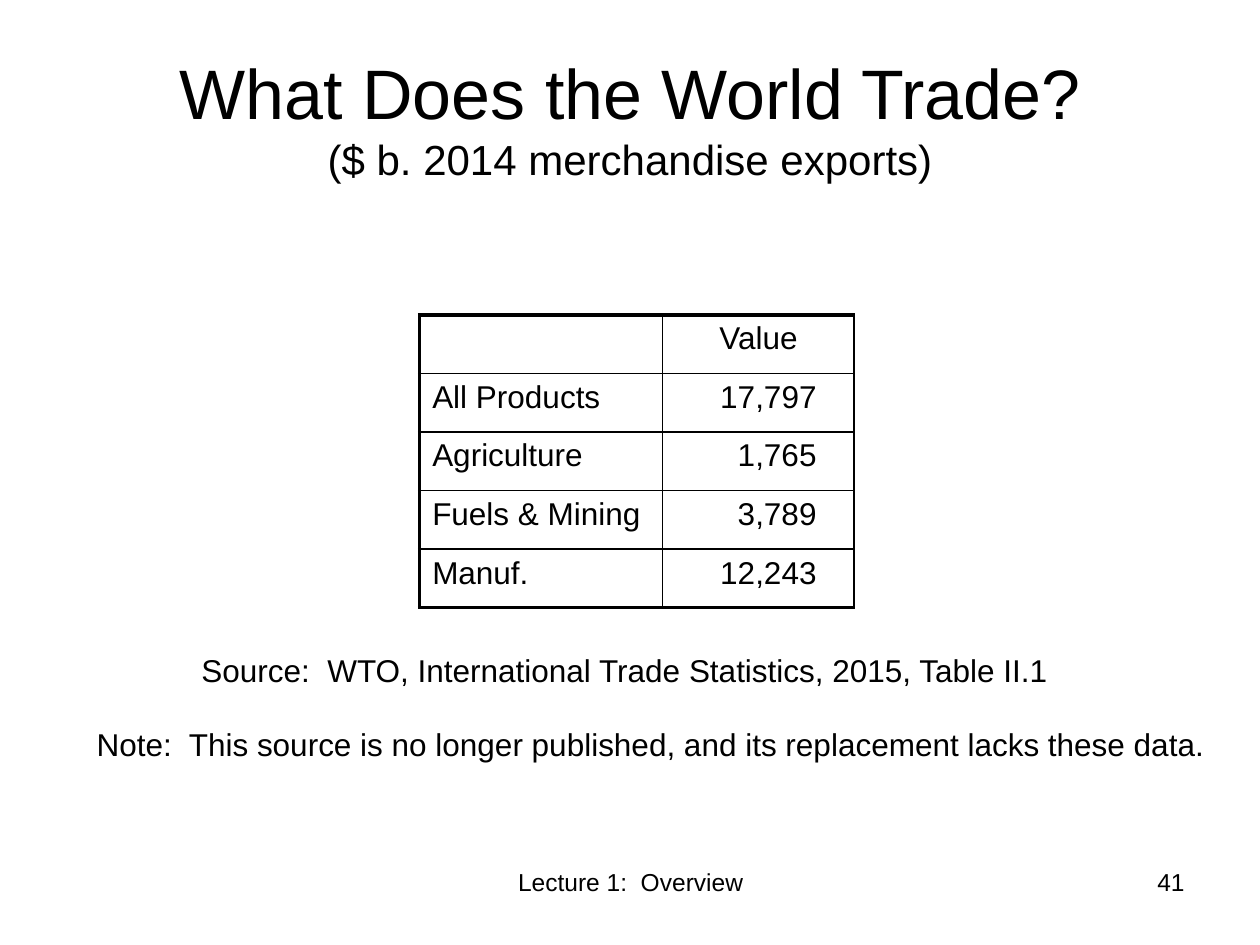
from lxml import etree
from pptx import Presentation
from pptx.dml.color import RGBColor
from pptx.enum.text import MSO_ANCHOR, MSO_AUTO_SIZE, PP_ALIGN
from pptx.oxml.ns import qn
from pptx.util import Cm, Pt

LEFT, CENTER, RIGHT = PP_ALIGN.LEFT, PP_ALIGN.CENTER, PP_ALIGN.RIGHT
MIDDLE = MSO_ANCHOR.MIDDLE
NO_AUTOFIT = MSO_AUTO_SIZE.NONE
TITLE_ONLY = 5

BLACK = "000000"
THIN, THICK = 1, 2.25
COLUMN_WIDTHS = (4.9, 3.86)
ROW_HEIGHT = 1.18
ROWS = [
    ("", "Value"),
    ("All Products", "17,797"),
    ("Agriculture", "1,765"),
    ("Fuels & Mining", "3,789"),
    ("Manuf.", "12,243"),
]


def color(value):
    return RGBColor.from_string(value)


def apply_format(target, values):
    for name, value in values.items():
        setattr(target, name, value)


def write_run(paragraph, text, size):
    run = paragraph.add_run()
    run.text = text
    apply_format(run.font, {"name": "Arial", "size": Pt(size)})
    run.font.color.rgb = color(BLACK)


def set_title(slide, heading, subtitle):
    title = slide.shapes.title
    apply_format(title, {"left": Cm(1.27), "top": Cm(0.76),
                         "width": Cm(22.86), "height": Cm(3.18)})
    apply_format(title.text_frame, {"vertical_anchor": MIDDLE,
                                    "auto_size": NO_AUTOFIT,
                                    "word_wrap": True})
    paragraph = title.text_frame.paragraphs[0]
    paragraph.alignment = CENTER
    write_run(paragraph, heading, 40)
    paragraph.add_line_break()
    write_run(paragraph, subtitle, 24)


def add_text(slide, text, box, size, alignment=LEFT, margins=None):
    shape = slide.shapes.add_textbox(*map(Cm, box))
    apply_format(shape.text_frame, {"word_wrap": True, **(margins or {})})
    paragraph = shape.text_frame.paragraphs[0]
    paragraph.alignment = alignment
    write_run(paragraph, text, size)


def set_borders(cell, widths):
    properties = cell._tc.get_or_add_tcPr()
    for side, width in widths.items():
        line = etree.SubElement(properties, qn(f"a:ln{side}"), w=str(Pt(width)))
        fill = etree.SubElement(line, qn("a:solidFill"))
        etree.SubElement(fill, qn("a:srgbClr"), val=BLACK)


def add_trade_table(slide):
    last_row = len(ROWS) - 1
    frame = slide.shapes.add_table(
        len(ROWS), len(COLUMN_WIDTHS), Cm(8.46), Cm(6.35),
        Cm(sum(COLUMN_WIDTHS)), Cm(ROW_HEIGHT * len(ROWS)))
    table = frame.table
    apply_format(table, {"first_row": False, "horz_banding": False})
    for column, width in zip(table.columns, COLUMN_WIDTHS):
        column.width = Cm(width)

    for row_index, values in enumerate(ROWS):
        table.rows[row_index].height = Cm(ROW_HEIGHT)
        for column_index, text in enumerate(values):
            cell = table.cell(row_index, column_index)
            # Heavy outline on the left, top and bottom
            set_borders(cell, {
                "L": THICK if column_index == 0 else THIN,
                "R": THIN,
                "T": THICK if row_index == 0 else THIN,
                "B": THICK if row_index == last_row else THIN,
            })
            cell.fill.background()
            paragraph = cell.text_frame.paragraphs[0]
            if column_index and row_index:
                cell.margin_right = Cm(0.76)
                paragraph.alignment = RIGHT
            elif column_index:
                paragraph.alignment = CENTER
            if text:
                write_run(paragraph, text, 18)


def main():
    presentation = Presentation()
    apply_format(presentation, {"slide_width": Cm(25.4),
                                "slide_height": Cm(19.05)})
    slide = presentation.slides.add_slide(presentation.slide_layouts[TITLE_ONLY])

    set_title(slide, "What Does the World Trade?",
              "($ b. 2014 merchandise exports)")
    add_trade_table(slide)

    # Source and note below the table
    flat = {"margin_top": 0, "margin_bottom": 0}
    add_text(slide, "Source:  WTO, International Trade Statistics, 2015, Table II.1",
             (3.81, 13.13, 20.75, 0.76), 18, margins=flat)
    add_text(slide, "Note:  This source is no longer published, "
             "and its replacement lacks these data.",
             (1.7, 14.61, 23.5, 0.76), 18, margins=flat)

    # Footer and slide number
    add_text(slide, "Lecture 1:  Overview", (8.69, 17.35, 8.05, 1.32), 14, CENTER)
    add_text(slide, "41", (18.21, 17.35, 5.92, 1.32), 14, RIGHT)

    presentation.save("out.pptx")


if __name__ == "__main__":
    main()
